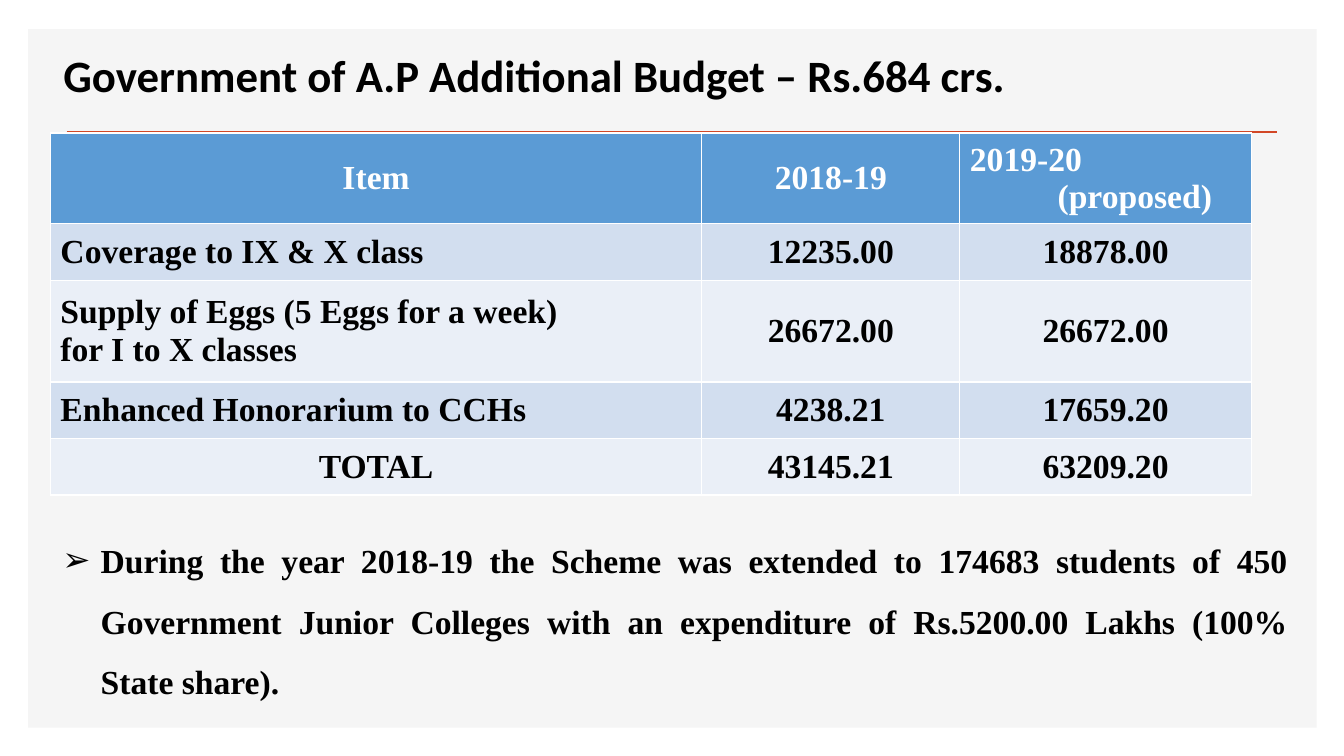
import pptx
import pptx.util
import pptx.dml.color
import pptx.enum.shapes
import pptx.enum.text
import pptx.oxml.xmlchemy
from lxml import etree

Inches = pptx.util.Inches
Pt = pptx.util.Pt
ALIGN = pptx.enum.text.PP_ALIGN
MIDDLE = pptx.enum.text.MSO_ANCHOR.MIDDLE

COLORS = {
    "panel": "F5F5F5", "rule": "D24726", "text": "000000", "white": "FFFFFF",
    "header": "5B9BD5", "band_dark": "D2DEEF", "band_light": "EAEFF7",
}
DRAWING = "http://schemas.openxmlformats.org/drawingml/2006/main"


def color(key):
    return pptx.dml.color.RGBColor.from_string(COLORS[key])


def write(paragraph, text, face, size, key, align):
    paragraph.alignment = align
    run = paragraph.add_run()
    run.text = text
    for attribute, value in {"name": face, "size": Pt(size), "bold": True}.items():
        setattr(run.font, attribute, value)
    run.font.color.rgb = color(key)


presentation = pptx.Presentation()
presentation.slide_width = Inches(13.33)
presentation.slide_height = Inches(7.5)
slide = presentation.slides.add_slide(presentation.slide_layouts[6])

panel = slide.shapes.add_shape(
    pptx.enum.shapes.MSO_SHAPE.RECTANGLE,
    Inches(0.28), Inches(0.29), Inches(12.78), Inches(6.93))
panel.shadow.inherit = False
panel.fill.solid()
panel.fill.fore_color.rgb = color("panel")
panel.line.fill.background()

rule = slide.shapes.add_connector(
    pptx.enum.shapes.MSO_CONNECTOR.STRAIGHT,
    Inches(0.66), Inches(1.31), Inches(12.67), Inches(1.31))
rule.line.color.rgb = color("rule")
rule.line.width = Pt(2)
etree.SubElement(rule._element.spPr, f"{{{DRAWING}}}effectLst")

title = slide.shapes.add_textbox(
    Inches(0.53), Inches(0.12), Inches(12.06), Inches(1.24)).text_frame
title.word_wrap = True
title.vertical_anchor = MIDDLE
write(title.paragraphs[0], "Government of A.P Additional Budget – Rs.684 crs.",
      "Calibri", 32, "text", ALIGN.LEFT)

note = slide.shapes.add_textbox(
    Inches(0.52), Inches(5.11), Inches(12.35), Inches(2.02)).text_frame
note.word_wrap = True
extension = note.paragraphs[0]
spacing = {"line_spacing": 1.5, "space_before": Pt(10), "space_after": Pt(12)}
for attribute, value in spacing.items():
    setattr(extension, attribute, value)
write(extension,
      "During the year 2018-19 the Scheme was extended to 174683 students of 450 "
      "Government Junior Colleges with an expenditure of Rs.5200.00 Lakhs "
      "(100% State share).",
      "Times New Roman", 24, "text", ALIGN.JUSTIFY)
indents = extension._p.get_or_add_pPr()
indents.set("marL", str(Inches(0.38)))
indents.set("indent", str(-Inches(0.38)))
etree.SubElement(indents, f"{{{DRAWING}}}buFont", typeface="Wingdings 3")
indents[-1].set("typeface", "Arial")
etree.SubElement(indents, f"{{{DRAWING}}}buChar", char="➢")

budget_rows = [
    ("Item", "2018-19", "2019-20\n(proposed)"),
    ("Coverage to IX & X class", "12235.00", "18878.00"),
    ("Supply of Eggs (5 Eggs for a week)\nfor I to X classes", "26672.00", "26672.00"),
    ("Enhanced Honorarium to CCHs", "4238.21", "17659.20"),
    ("TOTAL", "43145.21", "63209.20"),
]
column_widths = [6.46, 2.56, 2.89]
row_heights = [0.79, 0.56, 1.01, 0.56, 0.56]
budget = slide.shapes.add_table(
    len(budget_rows), len(column_widths), Inches(0.5), Inches(1.32),
    Inches(sum(column_widths)), Inches(sum(row_heights))).table
for column, width in zip(budget.columns, column_widths):
    column.width = Inches(width)
for row, height in zip(budget.rows, row_heights):
    row.height = Inches(height)

last_row = len(budget_rows) - 1
for r, entries in enumerate(budget_rows):
    band = "header" if r == 0 else ("band_dark" if r % 2 else "band_light")
    for c, entry in enumerate(entries):
        cell = budget.cell(r, c)
        cell.vertical_anchor = MIDDLE
        cell.fill.solid()
        cell.fill.fore_color.rgb = color(band)
        item_label = c == 0 and 0 < r < last_row
        align = ALIGN.LEFT if item_label or "\n" in entry else ALIGN.CENTER
        for i, line in enumerate(entry.split("\n")):
            frame = cell.text_frame
            paragraph = frame.add_paragraph() if i else frame.paragraphs[0]
            write(paragraph, line, "Times New Roman", 24,
                  "text" if r else "white", align)

proposed = budget.cell(0, 2).text_frame.paragraphs[1]
proposed._p.get_or_add_pPr().set("marL", str(Inches(0.87)))
for c in (1, 2):
    total = budget.cell(last_row, c)
    margins = {"margin_left": 0.01, "margin_top": 0.01,
               "margin_right": 0.01, "margin_bottom": 0}
    for side, inset in margins.items():
        setattr(total, side, Inches(inset))

presentation.save("out.pptx")
